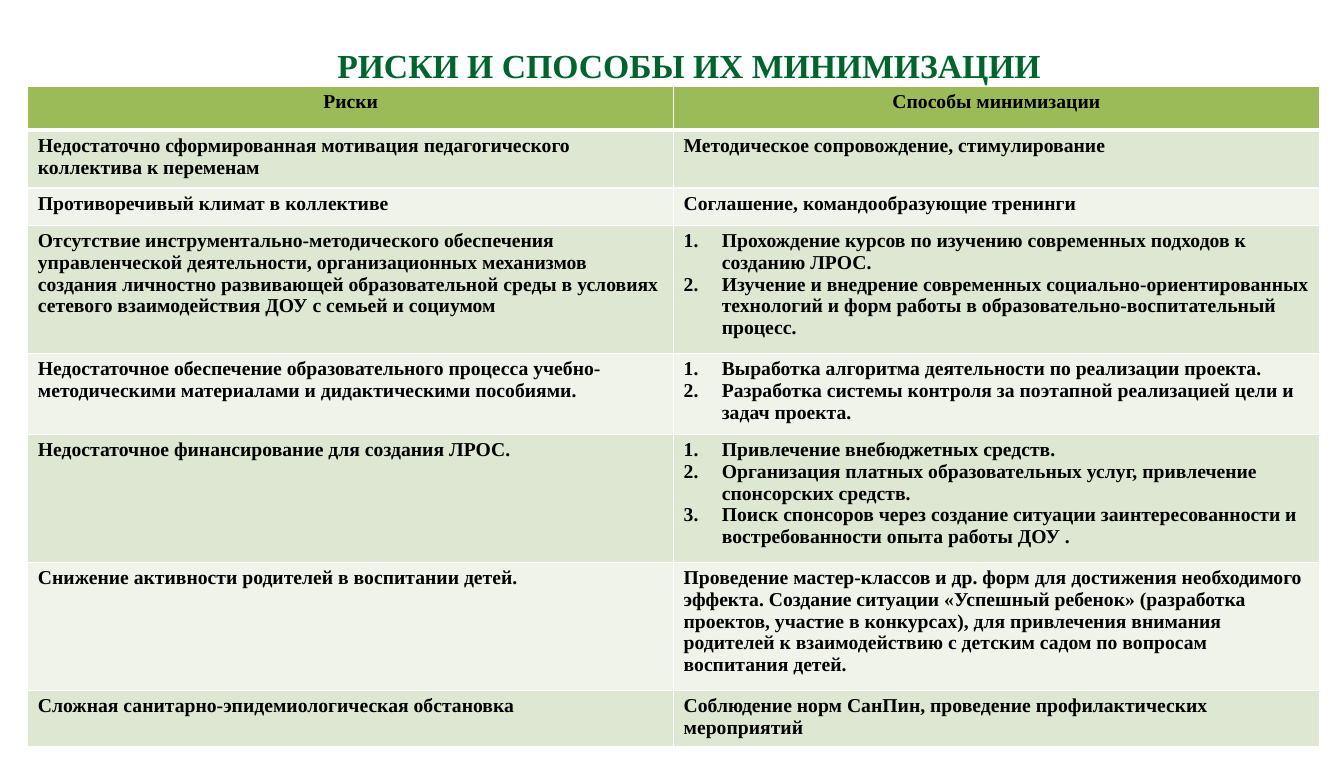
from dataclasses import dataclass

from lxml.etree import SubElement
from pptx import Presentation
from pptx.dml.color import RGBColor
from pptx.enum.text import MSO_ANCHOR, MSO_AUTO_SIZE, PP_ALIGN
from pptx.oxml.ns import qn
from pptx.slide import Slide
from pptx.table import Table, _Cell
from pptx.text.text import _Paragraph
from pptx.util import Cm, Pt


@dataclass(frozen=True)
class Theme:
    font: str = "Times New Roman"
    title: str = "00642D"
    ink: str = "000000"
    line: str = "FFFFFF"
    head: str = "9BBB59"
    bands: tuple[str, str] = ("DEE7D1", "EFF3EA")
    big: int = 24
    small: int = 14
    thin: int = 1
    thick: int = 3


@dataclass(frozen=True)
class Row:
    risk: str
    cures: tuple[str, ...]
    height: float


THEME = Theme()
HEAD = Row("Риски", ("Способы минимизации",), 1.11)
ROWS = (
    Row("Недостаточно сформированная мотивация педагогического коллектива к переменам",
        ("Методическое сопровождение, стимулирование",), 1.45),
    Row("Противоречивый климат в коллективе",
        ("Соглашение, командообразующие тренинги",), 0.94),
    Row("Отсутствие инструментально-методического обеспечения управленческой "
        "деятельности, организационных механизмов создания личностно развивающей "
        "образовательной среды в условиях сетевого взаимодействия ДОУ с семьей и социумом",
        ("Прохождение курсов по изучению современных подходов к созданию ЛРОС.",
         "Изучение и внедрение современных социально-ориентированных технологий "
         "и форм работы в образовательно-воспитательный процесс."), 3.22),
    Row("Недостаточное обеспечение образовательного процесса "
        "учебно-методическими материалами и дидактическими пособиями.",
        ("Выработка алгоритма деятельности по реализации проекта.",
         "Разработка системы контроля за поэтапной реализацией цели и задач проекта."),
        2.04),
    Row("Недостаточное финансирование для создания ЛРОС.",
        ("Привлечение внебюджетных средств.",
         "Организация платных образовательных услуг, привлечение спонсорских средств.",
         "Поиск спонсоров через создание ситуации заинтересованности и "
         "востребованности опыта работы ДОУ ."), 3.22),
    Row("Снижение активности родителей в воспитании детей.",
        ("Проведение мастер-классов и др. форм для достижения необходимого эффекта. "
         "Создание ситуации «Успешный ребенок» (разработка проектов, участие в "
         "конкурсах), для привлечения внимания родителей к взаимодействию с детским "
         "садом по вопросам воспитания детей.",), 3.22),
    Row("Сложная санитарно-эпидемиологическая обстановка",
        ("Соблюдение норм СанПин, проведение профилактических мероприятий",), 1.43),
)


def add_run(para: _Paragraph, text: str, size: int, color: str) -> None:
    run = para.add_run()
    run.text = text
    run.font.name = THEME.font
    run.font.size = Pt(size)
    run.font.bold = True
    run.font.color.rgb = RGBColor.from_string(color)


def number(para: _Paragraph) -> None:
    props = para._p.get_or_add_pPr()
    props.set("marL", str(Cm(0.96)))
    props.set("indent", str(Cm(-0.96)))
    tint = SubElement(props, qn("a:buClr"))
    SubElement(tint, qn("a:srgbClr"), val=THEME.ink)
    SubElement(props, qn("a:buFont"), typeface="+mj-lt")
    SubElement(props, qn("a:buAutoNum"), type="arabicPeriod")


def set_edges(cell: _Cell, top: int, bottom: int) -> None:
    props = cell._tc.get_or_add_tcPr()
    edges = {"L": THEME.thin, "R": THEME.thin, "T": top, "B": bottom}
    for side, width in edges.items():
        edge = SubElement(props, qn(f"a:ln{side}"), w=str(Pt(width)))
        fill = SubElement(edge, qn("a:solidFill"))
        SubElement(fill, qn("a:srgbClr"), val=THEME.line)


def fill_cell(cell: _Cell, items: tuple[str, ...], index: int) -> None:
    # The header and the first row share the thick edge
    set_edges(cell, THEME.thick if index == 1 else THEME.thin,
              THEME.thick if index == 0 else THEME.thin)
    cell.fill.solid()
    color = THEME.bands[(index - 1) % 2] if index else THEME.head
    cell.fill.fore_color.rgb = RGBColor.from_string(color)
    frame = cell.text_frame
    for place, text in enumerate(items):
        para = frame.add_paragraph() if place else frame.paragraphs[0]
        para.alignment = PP_ALIGN.LEFT if index else PP_ALIGN.CENTER
        if len(items) > 1:
            number(para)
        add_run(para, text, THEME.small, THEME.ink)


def add_title(slide: Slide) -> None:
    title = slide.shapes.title
    title.left, title.top = Cm(0.43), Cm(1.24)
    title.width, title.height = Cm(33.81), Cm(0.91)
    frame = title.text_frame
    frame.margin_left = frame.margin_right = 0
    frame.margin_top = frame.margin_bottom = 0
    frame.word_wrap = True
    frame.auto_size = MSO_AUTO_SIZE.NONE
    frame.vertical_anchor = MSO_ANCHOR.TOP
    para = frame.paragraphs[0]
    para.alignment = PP_ALIGN.CENTER
    para.line_spacing = 0.9
    add_run(para, "РИСКИ И СПОСОБЫ ИХ МИНИМИЗАЦИИ", THEME.big, THEME.title)


def add_risks(slide: Slide) -> None:
    rows = (HEAD, *ROWS)
    total = sum(row.height for row in rows)
    table: Table = slide.shapes.add_table(
        len(rows), 2, Cm(0.7), Cm(2.17), Cm(32.49), Cm(total)).table
    table.horz_banding = False
    for index, row in enumerate(rows):
        table.rows[index].height = Cm(row.height)
        fill_cell(table.cell(index, 0), (row.risk,), index)
        fill_cell(table.cell(index, 1), row.cures, index)


def main() -> None:
    deck = Presentation()
    deck.slide_width, deck.slide_height = Cm(33.81), Cm(19.05)
    slide = deck.slides.add_slide(deck.slide_layouts[5])
    # Title above the table of risks
    add_title(slide)
    add_risks(slide)
    deck.save("out.pptx")


if __name__ == "__main__":
    main()
